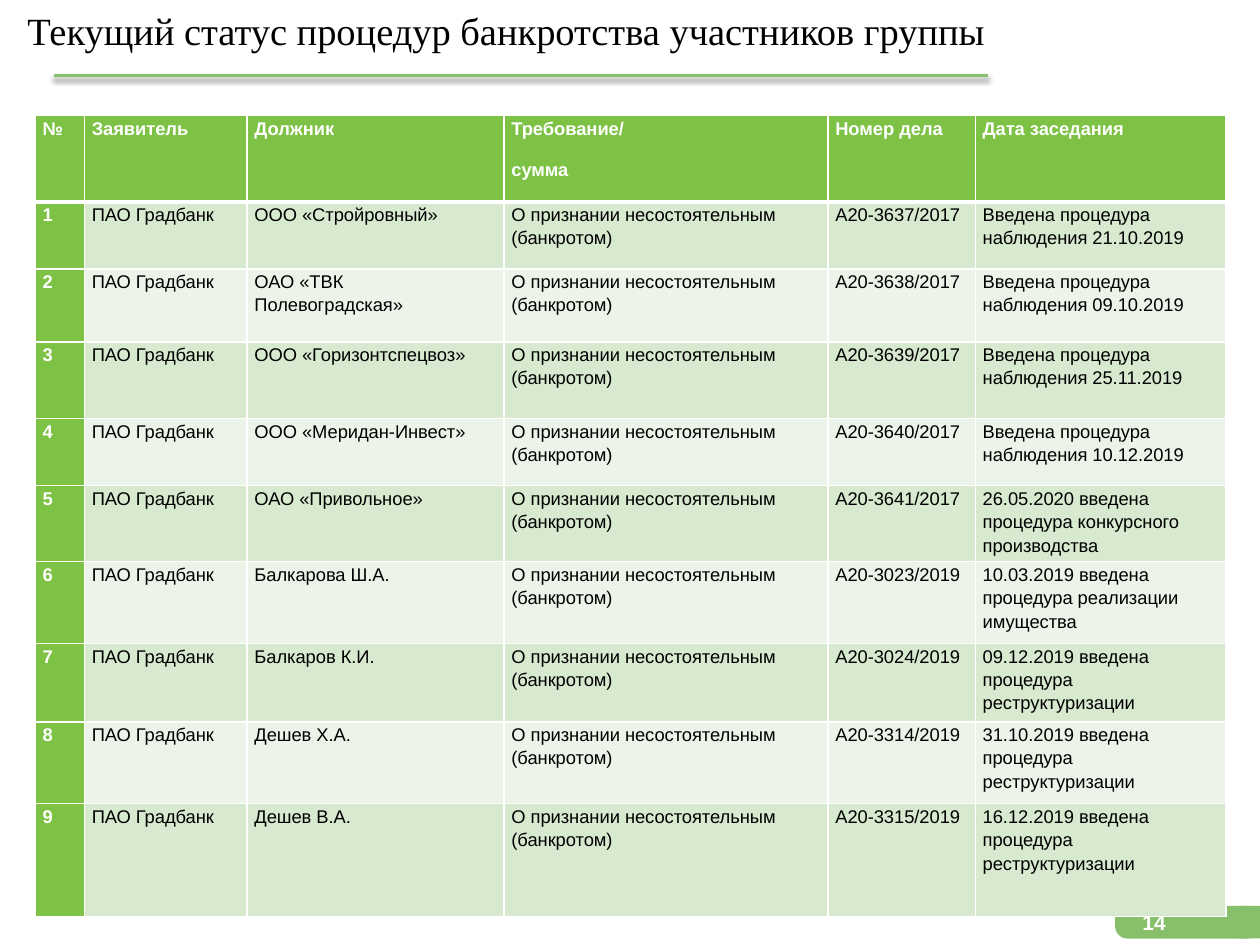
from lxml import etree
from pptx import Presentation
from pptx.dml.color import RGBColor
from pptx.enum.shapes import MSO_CONNECTOR, MSO_SHAPE
from pptx.enum.text import MSO_ANCHOR, MSO_AUTO_SIZE, PP_ALIGN
from pptx.oxml.ns import qn
from pptx.util import Cm, Pt

LEFT = PP_ALIGN.LEFT
TOP = MSO_ANCHOR.TOP
NO_AUTOFIT = MSO_AUTO_SIZE.NONE
STRAIGHT = MSO_CONNECTOR.STRAIGHT
ROUNDED, RECTANGLE = MSO_SHAPE.ROUNDED_RECTANGLE, MSO_SHAPE.RECTANGLE

WHITE, BLACK = "FFFFFF", "000000"
ACCENT, HEADER_GREEN = "87BF6B", "7DC244"
BAND_FILLS = ("D7E9CF", "ECF4E9")

HEADERS = ["№", "Заявитель", "Должник", "Требование/\nсумма", "Номер дела", "Дата заседания"]
APPLICANT = "ПАО Градбанк"
CLAIM = "О признании несостоятельным (банкротом)"
CASES = [
    ("ООО «Стройровный»", "А20-3637/2017", "Введена процедура наблюдения 21.10.2019"),
    ("ОАО «ТВК Полевоградская»", "А20-3638/2017", "Введена процедура наблюдения 09.10.2019"),
    ("ООО «Горизонтспецвоз»", "А20-3639/2017", "Введена процедура наблюдения 25.11.2019"),
    ("ООО «Меридан-Инвест»", "А20-3640/2017", "Введена процедура наблюдения 10.12.2019"),
    ("ОАО «Привольное»", "А20-3641/2017", "26.05.2020 введена процедура конкурсного производства"),
    ("Балкарова Ш.А.", "А20-3023/2019", "10.03.2019 введена процедура реализации имущества"),
    ("Балкаров К.И.", "А20-3024/2019", "09.12.2019 введена процедура реструктуризации"),
    ("Дешев Х.А.", "А20-3314/2019", "31.10.2019 введена процедура реструктуризации"),
    ("Дешев В.А.", "А20-3315/2019", "16.12.2019 введена процедура реструктуризации"),
]
COLUMN_WIDTHS = [0.99, 3.28, 5.18, 6.53, 2.97, 5.05]
ROW_HEIGHTS = [1.74, 1.35, 1.47, 1.55, 1.35, 1.52, 1.65, 1.58, 1.65, 2.28]


def rgb(color):
    """Turn a hex string into a colour."""
    return RGBColor.from_string(color)


def set_font(para, name, size, color, bold=False):
    """Format the font of a whole paragraph."""
    font = para.font
    font.name, font.size, font.bold = name, Pt(size), bold
    font.color.rgb = rgb(color)


def add_title(page, text):
    """Place and format the title placeholder."""
    title = page.shapes.title
    title.left, title.top, title.width, title.height = Cm(0.3), Cm(0.13), Cm(20), Cm(1.88)
    frame = title.text_frame
    frame.text = text
    frame.auto_size, frame.vertical_anchor = NO_AUTOFIT, TOP
    para = frame.paragraphs[0]
    para.alignment, para.line_spacing = LEFT, 0.9
    set_font(para, "Times New Roman", 22, BLACK)


def add_title_rule(page):
    """Draw the line under the title with its soft shadow."""
    rule = page.shapes.add_connector(STRAIGHT, Cm(1.09), Cm(1.52), Cm(19.91), Cm(1.52))
    rule.line.color.rgb = rgb(ACCENT)
    rule.line.width = Pt(2)
    effects = etree.SubElement(rule._element.spPr, qn("a:effectLst"))
    shadow = etree.SubElement(effects, qn("a:outerShdw"), blurRad="40000", dist="20000",
                              dir="5400000", rotWithShape="0")
    color = etree.SubElement(shadow, qn("a:srgbClr"), val=BLACK)
    etree.SubElement(color, qn("a:alpha"), val="38000")


def add_block(page, kind, left, width):
    """Add one filled part of the page number tab."""
    block = page.shapes.add_shape(kind, Cm(left), Cm(18.26), Cm(width), Cm(0.66))
    block.shadow.inherit = False
    block.fill.solid()
    block.fill.fore_color.rgb = rgb(ACCENT)
    block.line.fill.background()
    return block


def add_page_number(page, number):
    """Add the tab in the corner and the page number on it."""
    add_block(page, ROUNDED, 22.48, 2.92).adjustments[0] = 0.375
    add_block(page, RECTANGLE, 24.97, 0.43)
    box = page.shapes.add_textbox(Cm(22.78), Cm(18.21), Cm(1.78), Cm(0.64))
    frame = box.text_frame
    frame.word_wrap = True
    frame.text = number
    set_font(frame.paragraphs[0], "Arial", 12, WHITE, True)


def set_borders(cell, top, bottom):
    """Draw white borders with the given top and bottom widths in points."""
    properties = cell._tc.get_or_add_tcPr()
    for side, width in (("L", 1), ("R", 1), ("T", top), ("B", bottom)):
        line = etree.SubElement(properties, qn(f"a:ln{side}"), w=str(Pt(width)))
        fill = etree.SubElement(line, qn("a:solidFill"))
        etree.SubElement(fill, qn("a:srgbClr"), val=WHITE)


def fill_cell(cell, text, row, column):
    """Write and format one table cell by its position."""
    strong = row == 0 or column == 0
    set_borders(cell, 3 if row == 1 else 1, 3 if row == 0 else 1)
    cell.fill.solid()
    cell.fill.fore_color.rgb = rgb(HEADER_GREEN if strong else BAND_FILLS[(row - 1) % 2])
    cell.margin_left = cell.margin_right = Cm(0.15)
    cell.margin_top = cell.margin_bottom = 0
    cell.text = text
    for para in cell.text_frame.paragraphs:
        para.line_spacing, para.space_after = 1.15, Pt(10)
        set_font(para, "Arial", 10.5, WHITE if strong else BLACK, strong)


def add_case_table(page):
    """Add the table of bankruptcy cases."""
    rows = [HEADERS] + [
        [str(number), APPLICANT, debtor, CLAIM, case, status]
        for number, (debtor, case, status) in enumerate(CASES, 1)
    ]
    table = page.shapes.add_table(len(rows), len(HEADERS), Cm(0.71), Cm(2.33),
                                  Cm(sum(COLUMN_WIDTHS)), Cm(sum(ROW_HEIGHTS))).table
    for column, width in zip(table.columns, COLUMN_WIDTHS):
        column.width = Cm(width)
    for row, height in zip(table.rows, ROW_HEIGHTS):
        row.height = Cm(height)
    for row, texts in enumerate(rows):
        for column, text in enumerate(texts):
            fill_cell(table.cell(row, column), text, row, column)


def main():
    """Build the slide and save the deck."""
    deck = Presentation()
    deck.slide_width, deck.slide_height = Cm(25.4), Cm(19.05)
    page = deck.slides.add_slide(deck.slide_layouts[5])
    add_page_number(page, "14")
    add_title_rule(page)
    add_title(page, "Текущий статус процедур банкротства участников группы")
    add_case_table(page)
    deck.save("out.pptx")


if __name__ == "__main__":
    main()
